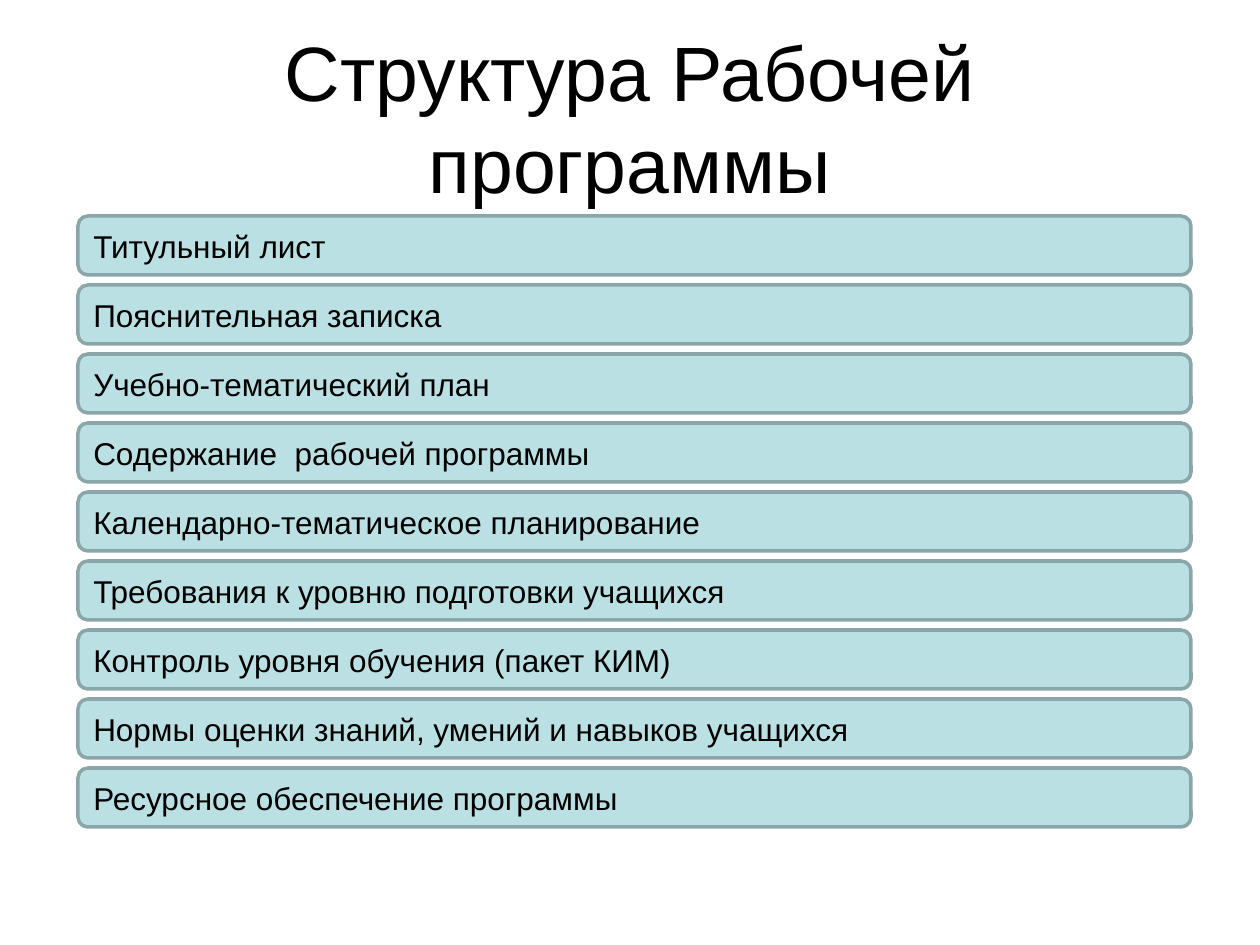
from pptx import Presentation
from pptx.dml.color import RGBColor
from pptx.enum.shapes import MSO_SHAPE
from pptx.enum.text import MSO_ANCHOR, PP_ALIGN
from pptx.util import Pt

ROUNDED = MSO_SHAPE.ROUNDED_RECTANGLE
MIDDLE = MSO_ANCHOR.MIDDLE
LEFT, CENTER = PP_ALIGN.LEFT, PP_ALIGN.CENTER

TITLE = "Структура Рабочей программы"
SECTIONS = [
    "Титульный лист",
    "Пояснительная записка",
    "Учебно-тематический план",
    "Содержание  рабочей программы",
    "Календарно-тематическое планирование",
    "Требования к уровню подготовки учащихся",
    "Контроль уровня обучения (пакет КИМ)",
    "Нормы оценки знаний, умений и навыков учащихся",
    "Ресурсное обеспечение программы",
]

FILL, OUTLINE, INK = "BBE0E3", "8AA6A8", "000000"
BAR_LEFT, BAR_TOP, BAR_WIDTH, BAR_HEIGHT = 78, 216, 1113, 59
BAR_GAP = 10
TITLE_MARGIN = 16


def px(length):
    return length * 914400 // 126


def color(value):
    return RGBColor.from_string(value)


def write(shape, text, size, align):
    frame = shape.text_frame
    frame.text = text
    frame.word_wrap = True
    frame.vertical_anchor = MIDDLE
    para = frame.paragraphs[0]
    para.alignment = align
    font = para.runs[0].font
    font.name = "Arial"
    font.size = Pt(size)
    font.color.rgb = color(INK)


deck = Presentation()
deck.slide_width, deck.slide_height = px(1260), px(945)
page = deck.slides.add_slide(deck.slide_layouts[6])

# Title
title = page.shapes.add_textbox(px(63), px(38), px(1134), px(157))
write(title, TITLE, 44, CENTER)
title.text_frame.margin_left = title.text_frame.margin_right = px(TITLE_MARGIN)

# Stack of section bars
for index, section in enumerate(SECTIONS):
    top = BAR_TOP + index * (BAR_HEIGHT + BAR_GAP)
    bar = page.shapes.add_shape(
        ROUNDED, px(BAR_LEFT), px(top), px(BAR_WIDTH), px(BAR_HEIGHT))
    bar.shadow.inherit = False
    bar.fill.solid()
    bar.fill.fore_color.rgb = color(FILL)
    bar.line.color.rgb = color(OUTLINE)
    bar.line.width = Pt(2)
    write(bar, section, 18, LEFT)

deck.save("out.pptx")
